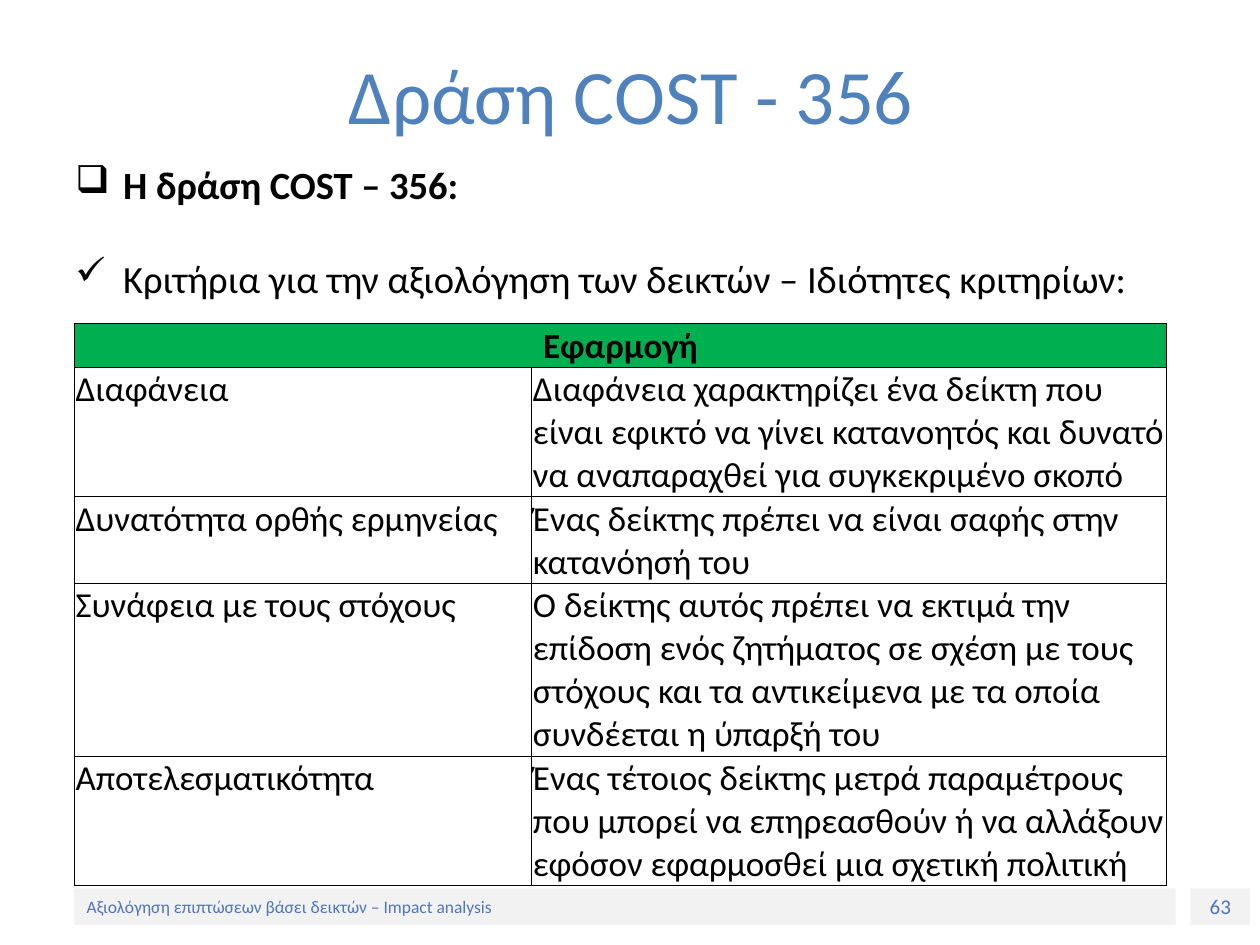
from lxml import etree
from pptx import Presentation
from pptx.dml.color import RGBColor
from pptx.enum.shapes import MSO_SHAPE
from pptx.enum.text import MSO_ANCHOR, PP_ALIGN
from pptx.oxml.ns import qn
from pptx.util import Inches, Pt

RECTANGLE = MSO_SHAPE.RECTANGLE
MIDDLE, TOP = MSO_ANCHOR.MIDDLE, MSO_ANCHOR.TOP
LEFT, CENTER = PP_ALIGN.LEFT, PP_ALIGN.CENTER

COLORS = {
    "title": "4F81BD",
    "text": "000000",
    "footer": "5075BC",
    "strip": "F2F2F2",
    "header": "00B050",
}
FONT = "Calibri"
UNIT = Inches(0.1)
COLUMNS, ROWS = 100, 75
LINE_ROWS = 3.43

HEADER = "Εφαρμογή"
CRITERIA = [
    ("Διαφάνεια",
     "Διαφάνεια χαρακτηρίζει ένα δείκτη που είναι εφικτό να γίνει κατανοητός "
     "και δυνατό να αναπαραχθεί για συγκεκριμένο σκοπό", 3),
    ("Δυνατότητα ορθής ερμηνείας",
     "Ένας δείκτης πρέπει να είναι σαφής στην κατανόησή του", 2),
    ("Συνάφεια με τους στόχους",
     "Ο δείκτης αυτός πρέπει να εκτιμά την επίδοση ενός ζητήματος σε σχέση με "
     "τους στόχους και τα αντικείμενα με τα οποία συνδέεται η ύπαρξή του", 4),
    ("Αποτελεσματικότητα",
     "Ένας τέτοιος δείκτης μετρά παραμέτρους που μπορεί να επηρεασθούν ή να "
     "αλλάξουν εφόσον εφαρμοσθεί μια σχετική πολιτική", 3),
]


def grid(*lengths):
    return [round(length * UNIT) for length in lengths]


def color(name):
    return RGBColor.from_string(COLORS[name])


def write(para, text, size, ink, align=LEFT, bold=False):
    para.text = text
    para.alignment = align
    para.font.name = FONT
    para.font.size = Pt(size)
    para.font.bold = bold
    para.font.color.rgb = color(ink)


def add_bullet(para, mark, indent):
    props = para._p.get_or_add_pPr()
    props.set("marL", str(indent))
    props.set("indent", str(-indent))
    etree.SubElement(props, qn("a:buChar")).set("char", mark)


def add_title(page, box, text):
    frame = page.shapes.add_textbox(*grid(*box)).text_frame
    frame.word_wrap = True
    frame.vertical_anchor = MIDDLE
    write(frame.paragraphs[0], text, 44, "title", CENTER)


def add_points(page, box, points):
    frame = page.shapes.add_textbox(*grid(*box)).text_frame
    frame.word_wrap = True
    frame.vertical_anchor = TOP
    for index, (mark, text, bold) in enumerate(points):
        para = frame.add_paragraph() if index else frame.paragraphs[0]
        if index:
            para.space_before = Pt(27)
        add_bullet(para, mark, Inches(0.38))
        write(para, text, 22, "text", bold=bold)


def add_strip(page, box, text, size, align):
    strip = page.shapes.add_shape(RECTANGLE, *grid(*box))
    strip.shadow.inherit = False
    strip.fill.solid()
    strip.fill.fore_color.rgb = color("strip")
    strip.line.fill.background()
    strip.text_frame.word_wrap = True
    strip.text_frame.vertical_anchor = MIDDLE
    write(strip.text_frame.paragraphs[0], text, size, "footer", align)


def add_borders(cell):
    props = cell._tc.get_or_add_tcPr()
    for side in ("lnL", "lnR", "lnT", "lnB"):
        line = etree.SubElement(props, qn(f"a:{side}"), w=str(Pt(0.5)))
        fill = etree.SubElement(line, qn("a:solidFill"))
        etree.SubElement(fill, qn("a:srgbClr"), val=COLORS["text"])


def style_cell(cell, fill=None):
    add_borders(cell)
    cell.margin_left = cell.margin_right = cell.margin_top = Inches(0.01)
    cell.margin_bottom = 0
    cell.vertical_anchor = TOP
    if fill:
        cell.fill.solid()
        cell.fill.fore_color.rgb = color(fill)
    else:
        cell.fill.background()


def add_criteria(page, box, column_widths):
    line_counts = [1] + [lines for _, _, lines in CRITERIA]
    table = page.shapes.add_table(len(line_counts), 2, *grid(*box)).table
    for column, width in zip(table.columns, grid(*column_widths)):
        column.width = width
    for row, lines in zip(table.rows, line_counts):
        row.height = round(lines * LINE_ROWS * UNIT)

    for cell in table.rows[0].cells:
        style_cell(cell, "header")
    table.cell(0, 0).merge(table.cell(0, 1))
    write(table.cell(0, 0).text_frame.paragraphs[0], HEADER, 20, "text", CENTER, True)

    for row, (name, meaning, _) in enumerate(CRITERIA, start=1):
        for column, text in enumerate((name, meaning)):
            cell = table.cell(row, column)
            style_cell(cell)
            write(cell.text_frame.paragraphs[0], text, 20, "text")


def main():
    deck = Presentation()
    deck.slide_width, deck.slide_height = grid(COLUMNS, ROWS)
    page = deck.slides.add_slide(deck.slide_layouts[6])
    add_strip(page, (94.5, 70.5, 4.7, 2.9), "63", 12, CENTER)
    add_strip(page, (5.9, 70.5, 87.4, 2.9),
              "Αξιολόγηση επιπτώσεων βάσει δεικτών – Impact analysis", 10, LEFT)
    add_title(page, (5.1, 3.6, 90, 7.7), "Δράση COST - 356")
    add_points(page, (5, 12.3, 90, 12.6), [
        ("❑", "Η δράση COST – 356:", True),
        ("✓", "Κριτήρια για την αξιολόγηση των δεικτών – Ιδιότητες κριτηρίων:", False),
    ])
    add_criteria(page, (5.9, 25.7, 86.7, 44.6), (36.3, 50.4))
    deck.save("out.pptx")


if __name__ == "__main__":
    main()
